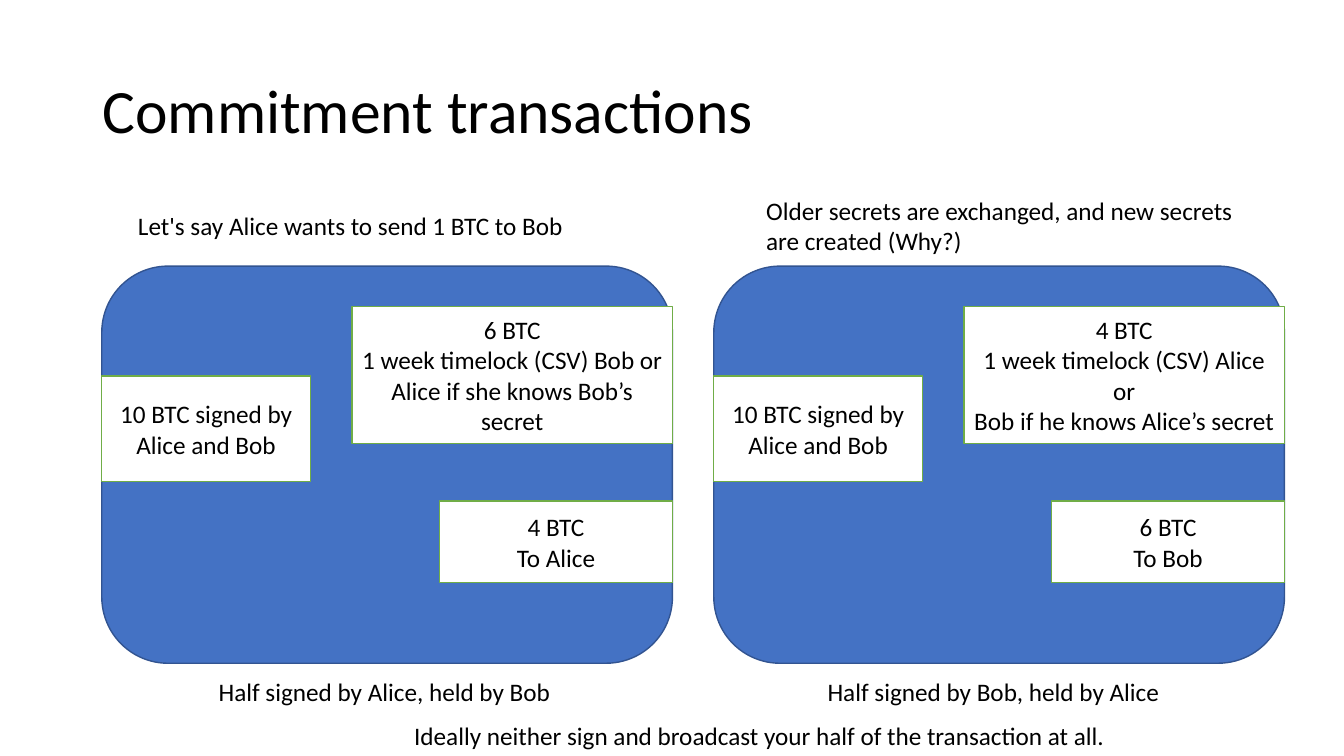
from pptx import Presentation
from pptx.dml.color import RGBColor
from pptx.enum.shapes import MSO_SHAPE
from pptx.enum.text import MSO_ANCHOR, PP_ALIGN
from pptx.util import Emu, Pt

PIXEL = 9144
BLACK, WHITE, BLUE, NAVY, GREEN = "000000", "FFFFFF", "4472C4", "325491", "70AD47"
PANEL_WIDTH, PANEL_HEIGHT = 566, 394


def color(value):
    """Turn a hex string into a colour."""
    return RGBColor.from_string(value)


def lengths(box):
    """Turn a box in px into EMU lengths."""
    return [Emu(value * PIXEL) for value in box]


def write(shape, lines, size=18, **formats):
    """Write one paragraph per line with shared formatting."""
    frame = shape.text_frame
    frame.text = "\n".join(lines)
    font_values = {"name": "Calibri", "size": Pt(size)}
    for paragraph in frame.paragraphs:
        for name, value in formats.items():
            setattr(paragraph, name, value)
        for run in paragraph.runs:
            for name, value in font_values.items():
                setattr(run.font, name, value)
            run.font.color.rgb = color(BLACK)


def add_label(slide, box, text, wrap=False, anchor=MSO_ANCHOR.TOP, **formats):
    """Place a plain text label."""
    label = slide.shapes.add_textbox(*lengths(box))
    frame_values = {"word_wrap": wrap, "vertical_anchor": anchor}
    for name, value in frame_values.items():
        setattr(label.text_frame, name, value)
    write(label, [text], **formats)


def add_block(slide, box, kind, fill, line):
    """Place a filled and outlined shape."""
    block = slide.shapes.add_shape(kind, *lengths(box))
    block.shadow.inherit = False
    block.fill.solid()
    block.fill.fore_color.rgb = color(fill)
    block.line.color.rgb = color(line)
    block.line.width = Pt(1)
    return block


def add_card(slide, box, lines):
    """Place a white card with centred text."""
    card = add_block(slide, box, MSO_SHAPE.RECTANGLE, WHITE, GREEN)
    card.text_frame.word_wrap = True
    card.text_frame.vertical_anchor = MSO_ANCHOR.MIDDLE
    write(card, lines, alignment=PP_ALIGN.CENTER)


def add_transaction(slide, left, top, locked, payment, caption, caption_left):
    """Place one transaction with its input, outputs and caption."""
    panel = (left, top, PANEL_WIDTH, PANEL_HEIGHT)
    add_block(slide, panel, MSO_SHAPE.ROUNDED_RECTANGLE, BLUE, NAVY)
    right = left + PANEL_WIDTH
    add_card(slide, (left, top + 109, 207, 105), ["10 BTC signed by Alice and Bob"])
    for lines, offset, width, height in ((locked, 40, 318, 136), (payment, 233, 231, 81)):
        add_card(slide, (right - width, top + offset, width, height), lines)
    caption_box = (left + caption_left, top + PANEL_HEIGHT + 8, 353, 40)
    add_label(slide, caption_box, caption)


def build_slide(presentation):
    """Build the commitment transactions slide."""
    slide = presentation.slides.add_slide(presentation.slide_layouts[6])
    add_label(slide, (92, 40, 1150, 145), "Commitment transactions", wrap=True,
              anchor=MSO_ANCHOR.MIDDLE, size=44, line_spacing=0.9)
    add_label(slide, (127, 204, 452, 40), "Let's say Alice wants to send 1 BTC to Bob")
    add_transaction(
        slide, 101, 264,
        ["6 BTC", "1 week timelock (CSV) Bob or", "Alice if she knows Bob’s secret"],
        ["4 BTC", "To Alice"], "Half signed by Alice, held by Bob", 106)
    add_transaction(
        slide, 708, 264,
        ["4 BTC", "1 week timelock (CSV) Alice or", "Bob if he knows Alice’s secret"],
        ["6 BTC", "To Bob"], "Half signed by Bob, held by Alice", 103)
    add_label(slide, (401, 710, 713, 40),
              "Ideally neither sign and broadcast your half of the transaction at all.")
    add_label(slide, (750, 189, 492, 71),
              "Older secrets are exchanged, and new secrets are created (Why?)", wrap=True)


def main():
    """Create and save the presentation."""
    presentation = Presentation()
    presentation.slide_width, presentation.slide_height = lengths((1333, 750))
    build_slide(presentation)
    presentation.save("out.pptx")


if __name__ == "__main__":
    main()
